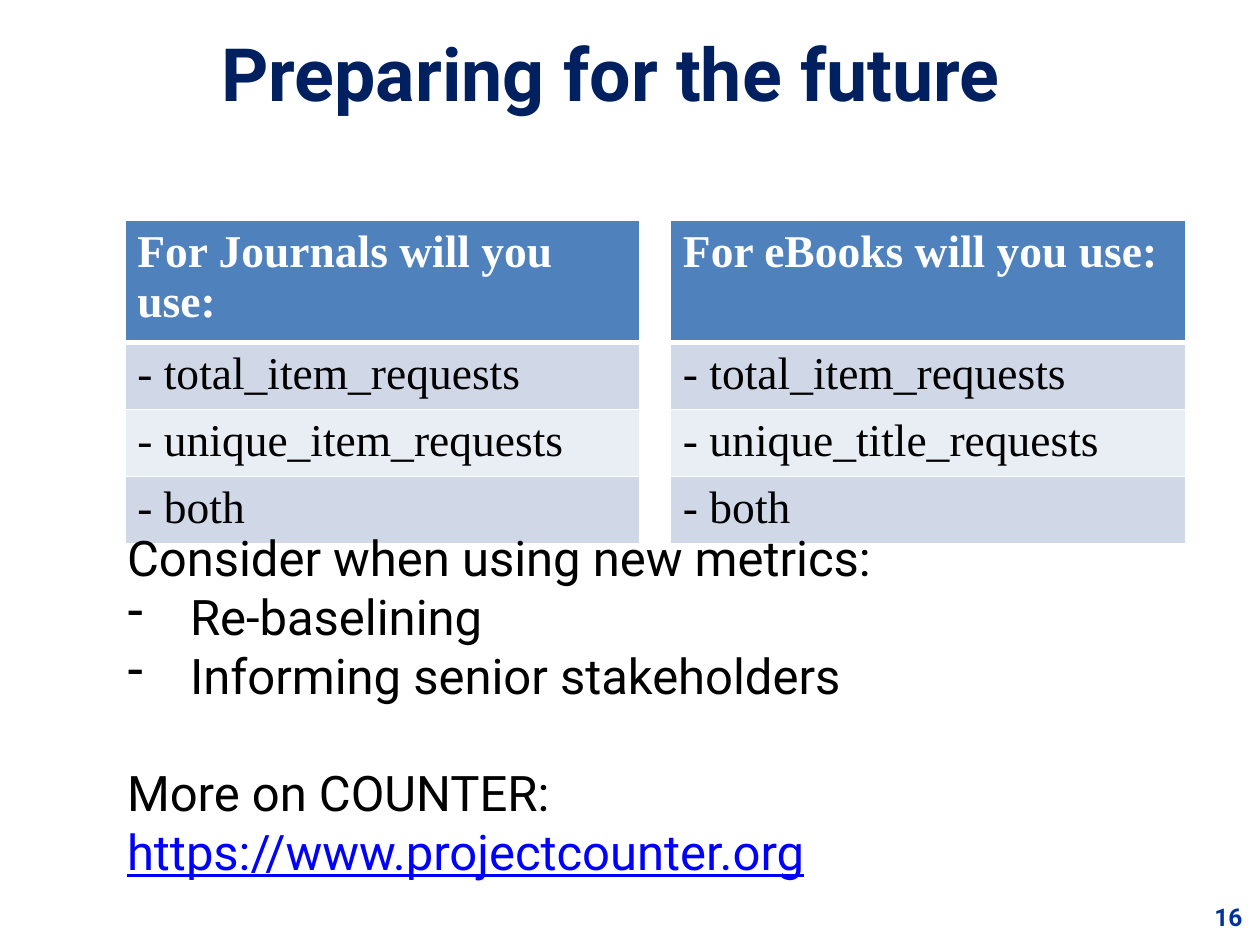
import pptx
import pptx.dml.color
import pptx.enum.text
import pptx.oxml
import pptx.oxml.ns
import pptx.util

Pt = pptx.util.Pt
RGBColor = pptx.dml.color.RGBColor
Align = pptx.enum.text.PP_ALIGN
Anchor = pptx.enum.text.MSO_ANCHOR

WHITE = RGBColor(0xFF, 0xFF, 0xFF)
BLACK = RGBColor(0, 0, 0)
NAVY = RGBColor(0x00, 0x20, 0x60)
NUMBER_BLUE = RGBColor(0x00, 0x33, 0x99)
LINK_BLUE = RGBColor(0x00, 0x00, 0xFF)
HEADER_BLUE = RGBColor(0x4F, 0x81, 0xBD)
BANDS = (RGBColor(0xD0, 0xD8, 0xE8), RGBColor(0xE9, 0xED, 0xF4))

TITLE = {"name": "Roboto", "size": Pt(42), "bold": True, "color": NAVY}
NUMBER = {"name": "Roboto", "size": Pt(14), "bold": True, "color": NUMBER_BLUE}
BODY = {"name": "Roboto", "size": Pt(28), "color": BLACK}
LINK = {**BODY, "color": LINK_BLUE, "underline": True}
CELL = {"name": "Times New Roman", "size": Pt(26), "bold": False, "color": BLACK}
HEADER = {**CELL, "bold": True, "color": WHITE}

METRICS = (
    ("For Journals will you use:", "", "For eBooks will you use:"),
    ("- total_item_requests", "", "- total_item_requests"),
    ("- unique_item_requests", "", "- unique_title_requests"),
    ("- both", "", "- both"),
)


class SlideBuilder:
    def __init__(self, slide):
        self.slide = slide

    def run(self, paragraph, text, style):
        run = paragraph.add_run()
        run.text = text
        for name, value in style.items():
            if name == "color":
                run.font.color.rgb = value
            else:
                setattr(run.font, name, value)

    def text(self, box, paragraphs, anchor=Anchor.TOP):
        """Add a text box; each paragraph is (runs, format, has_dash)."""
        shape = self.slide.shapes.add_textbox(*map(Pt, box))
        frame = shape.text_frame
        frame.word_wrap = True
        frame.vertical_anchor = anchor
        for index, (runs, layout, has_dash) in enumerate(paragraphs):
            paragraph = frame.add_paragraph() if index else frame.paragraphs[0]
            if has_dash:
                self.dash(paragraph)
            for name, value in layout.items():
                setattr(paragraph, name, value)
            for text, style in runs:
                self.run(paragraph, text, style)

    def dash(self, paragraph):
        """Give the paragraph a hanging dash bullet."""
        properties = paragraph._p.get_or_add_pPr()
        properties.set("marL", str(Pt(36)))
        properties.set("indent", str(Pt(-36)))
        bullet = pptx.oxml.parse_xml(
            f'<a:buChar {pptx.oxml.ns.nsdecls("a")} char="-"/>')
        properties.append(bullet)

    def borders(self, cell, bottom_width):
        properties = cell._tc.get_or_add_tcPr()
        widths = {"lnL": 1, "lnR": 1, "lnT": 1, "lnB": bottom_width}
        for index, (side, width) in enumerate(widths.items()):
            line = pptx.oxml.parse_xml(
                f'<a:{side} {pptx.oxml.ns.nsdecls("a")} w="{Pt(width)}">'
                f'<a:solidFill><a:srgbClr val="{WHITE}"/></a:solidFill></a:{side}>')
            properties.insert(index, line)

    def table(self, box, rows, column_widths):
        frame = self.slide.shapes.add_table(
            len(rows), len(column_widths), *map(Pt, box))
        table = frame.table
        table.first_row = table.horz_banding = False
        for column, width in zip(table.columns, column_widths):
            column.width = Pt(width)
        for row_index, texts in enumerate(rows):
            is_header = row_index == 0
            fill = HEADER_BLUE if is_header else BANDS[(row_index - 1) % 2]
            for column_index, text in enumerate(texts):
                cell = table.cell(row_index, column_index)
                if text:
                    cell.fill.solid()
                    cell.fill.fore_color.rgb = fill
                    self.run(cell.text_frame.paragraphs[0], text,
                             HEADER if is_header else CELL)
                else:
                    cell.fill.background()
                self.borders(cell, 3 if is_header else 1)


def main():
    presentation = pptx.Presentation()
    presentation.slide_width, presentation.slide_height = Pt(720), Pt(540)
    slide = presentation.slides.add_slide(presentation.slide_layouts[6])
    builder = SlideBuilder(slide)

    builder.text((677.5, 512, 39.6, 24.5),
                 [([("16", NUMBER)], {"alignment": Align.RIGHT}, False)])
    builder.table((71.3, 126, 606.3, 118), METRICS, (294.5, 17.3, 294.5))
    builder.text((65.5, 298, 617.8, 177), [
        ([("Consider when using new metrics:", BODY)], {}, False),
        ([("Re-baselining", BODY)], {}, True),
        ([("Informing senior stakeholders", BODY)], {}, True),
        ([("More on COUNTER: ", BODY), ("https://www.projectcounter.org", LINK)],
         {"space_before": Pt(33.5)}, False),
    ])
    builder.text((59.8, 4.3, 578.2, 73.4),
                 [([("Preparing for the future", TITLE)],
                   {"alignment": Align.CENTER}, False)], Anchor.MIDDLE)

    presentation.save("out.pptx")


if __name__ == "__main__":
    main()
